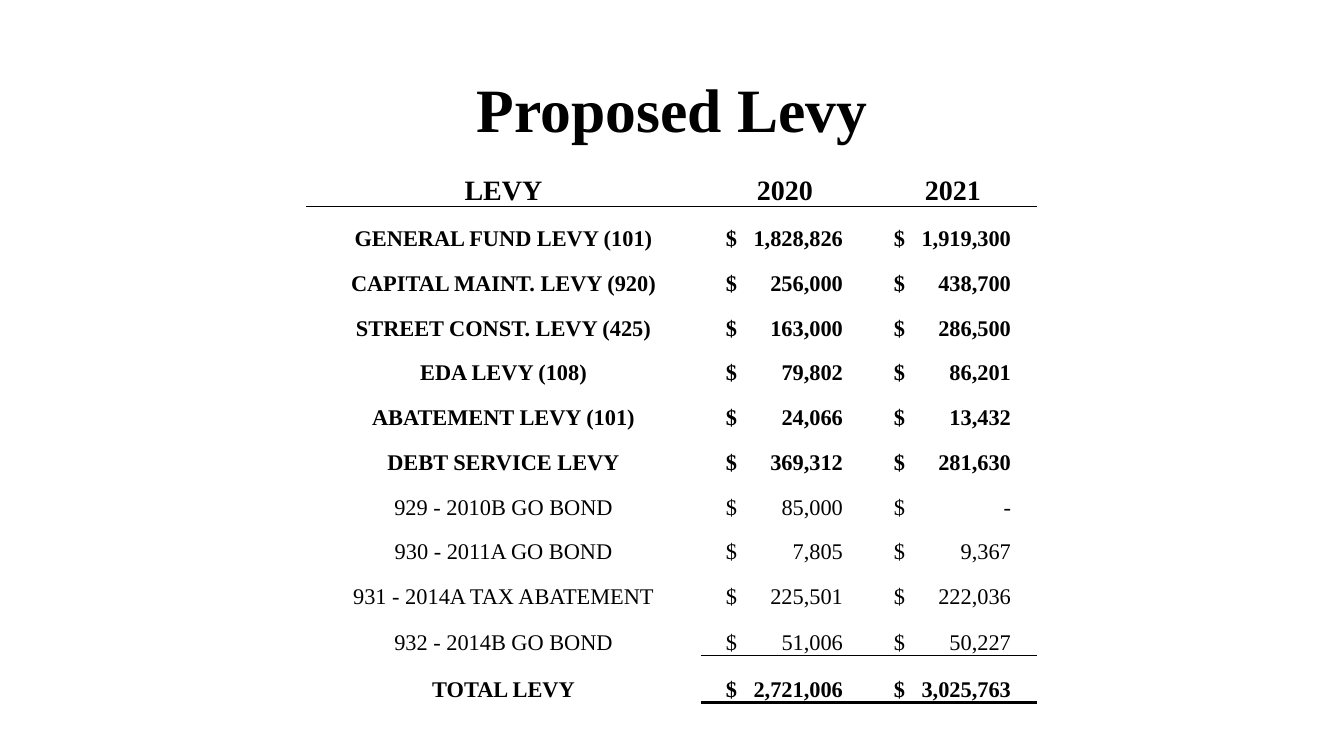
from lxml import etree
from pptx import Presentation
from pptx.dml.color import RGBColor
from pptx.enum.text import MSO_ANCHOR, PP_ALIGN
from pptx.oxml.ns import qn
from pptx.util import Pt

CENTER, LEFT = PP_ALIGN.CENTER, PP_ALIGN.LEFT
MIDDLE, BOTTOM = MSO_ANCHOR.MIDDLE, MSO_ANCHOR.BOTTOM
PX_PER_INCH = 100.8
COLORS = {"ink": "000000", "paper": "FFFFFF"}
THIN, THICK = 0.5, 2
DOLLAR_INDENT, AMOUNT_WIDTH = 25, 117

HEADINGS = ("LEVY", "2020", "2021")
LEVIES = [
    ("GENERAL FUND LEVY (101)", "1,828,826", "1,919,300"),
    ("CAPITAL MAINT. LEVY (920)", "256,000", "438,700"),
    ("STREET CONST. LEVY (425)", "163,000", "286,500"),
    ("EDA LEVY (108)", "79,802", "86,201"),
    ("ABATEMENT LEVY (101)", "24,066", "13,432"),
    ("DEBT SERVICE LEVY", "369,312", "281,630"),
]
BONDS = [
    ("929 - 2010B GO BOND", "85,000", "-"),
    ("930 - 2011A GO BOND", "7,805", "9,367"),
    ("931 - 2014A TAX ABATEMENT", "225,501", "222,036"),
    ("932 - 2014B GO BOND", "51,006", "50,227"),
]
TOTAL = ("TOTAL LEVY", "2,721,006", "3,025,763")


def px(length):
    return round(length * 914400 / PX_PER_INCH)


def write(frame, text, size=16, bold=True, align=CENTER, spacing=None, tab=None):
    """Fill the first paragraph of a text frame; tab is a right tab stop in px."""
    paragraph = frame.paragraphs[0]
    if tab:
        tabs = etree.SubElement(paragraph._p.get_or_add_pPr(), qn("a:tabLst"))
        etree.SubElement(tabs, qn("a:tab"), pos=str(px(tab)), algn="r")
    paragraph.alignment = align
    if spacing:
        paragraph.line_spacing = spacing
    run = paragraph.add_run()
    run.text = text
    run.font.name = "Times New Roman"
    run.font.size = Pt(size)
    run.font.bold = bold
    run.font.color.rgb = RGBColor.from_string(COLORS["ink"])


class LevySlide:
    def __init__(self, presentation):
        self.slide = presentation.slides.add_slide(presentation.slide_layouts[6])
        background = self.slide.background.fill
        background.solid()
        background.fore_color.rgb = RGBColor.from_string(COLORS["paper"])

    def title(self, text, left, top, width, height):
        shape = self.slide.shapes.add_textbox(px(left), px(top), px(width), px(height))
        shape.text_frame.word_wrap = True
        shape.text_frame.vertical_anchor = MIDDLE
        write(shape.text_frame, text, size=44, spacing=0.9)

    def table(self, left, top, widths, heights):
        shape = self.slide.shapes.add_table(
            len(heights), len(widths), px(left), px(top), px(sum(widths)), px(sum(heights)))
        table = shape.table
        table.first_row = table.horz_banding = False
        for column, width in zip(table.columns, widths):
            column.width = px(width)
        for row, height in zip(table.rows, heights):
            row.height = px(height)
        return table

    def cell(self, cell, text, top=0, bottom=0, indent=0, **text_format):
        """Fill a cell; top and bottom are border widths in points, 0 for none."""
        cell.margin_left = px(indent)
        cell.margin_right = cell.margin_top = cell.margin_bottom = 0
        cell.vertical_anchor = BOTTOM
        self.borders(cell, lnL=0, lnR=0, lnT=top, lnB=bottom)
        cell.fill.background()
        write(cell.text_frame, text, **text_format)

    def borders(self, cell, **widths):
        properties = cell._tc.get_or_add_tcPr()
        for side, width in widths.items():
            line = etree.SubElement(properties, qn(f"a:{side}"), w=str(Pt(width)))
            if width:
                fill = etree.SubElement(line, qn("a:solidFill"))
                etree.SubElement(fill, qn("a:srgbClr"), val=COLORS["ink"])
            else:
                etree.SubElement(line, qn("a:noFill"))


def main():
    presentation = Presentation()
    presentation.slide_width, presentation.slide_height = px(1344), px(756)
    slide = LevySlide(presentation)
    slide.title("Proposed Levy", 93, 40, 1159, 146)

    rows = LEVIES + BONDS + [TOTAL]
    regular_rows = len(rows) - 1
    heights = [448 / regular_rows] * regular_rows + [46, 47]
    table = slide.table(306, 162, (395, 168, 168), heights)

    for column, heading in enumerate(HEADINGS):
        slide.cell(table.cell(0, column), heading, bottom=THIN, size=20)
    for number, (name, *amounts) in enumerate(rows, 1):
        bold = rows[number - 1] not in BONDS
        is_total = number == len(rows)
        header_line = THIN if number == 1 else 0
        top = THIN if is_total else header_line
        bottom = {len(rows) - 1: THIN, len(rows): THICK}.get(number, 0)
        slide.cell(table.cell(number, 0), name, top=header_line, bold=bold)
        for column, amount in enumerate(amounts, 1):
            slide.cell(table.cell(number, column), f"$\t{amount}", top=top, bottom=bottom,
                       indent=DOLLAR_INDENT, bold=bold, align=LEFT, tab=AMOUNT_WIDTH)

    presentation.save("out.pptx")


if __name__ == "__main__":
    main()
